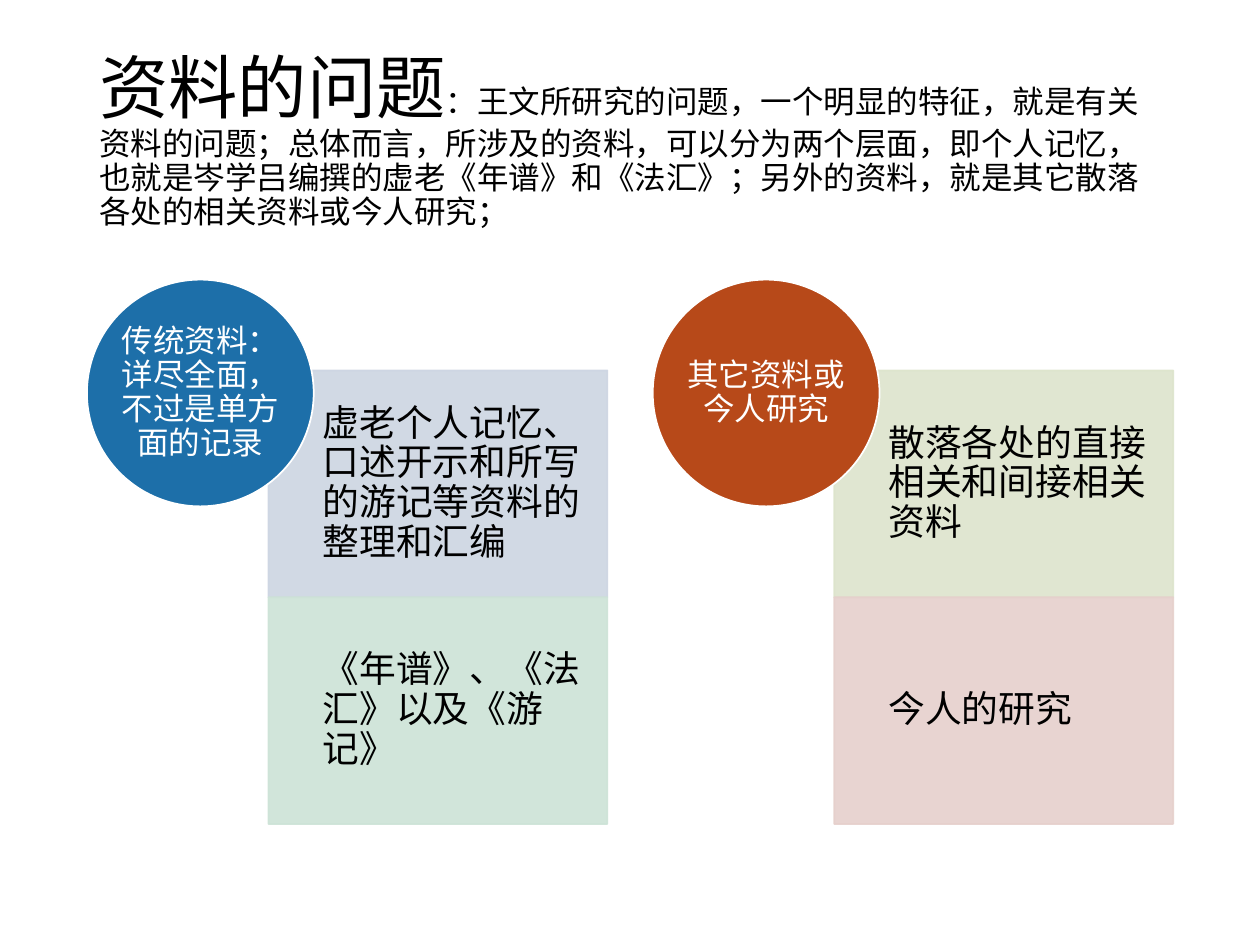
from dataclasses import dataclass

from lxml import etree
from pptx import Presentation
from pptx.dml.color import RGBColor
from pptx.enum.shapes import MSO_SHAPE
from pptx.enum.text import MSO_ANCHOR, PP_ALIGN
from pptx.oxml.ns import qn
from pptx.util import Pt

RECTANGLE = MSO_SHAPE.RECTANGLE
OVAL = MSO_SHAPE.OVAL
MIDDLE = MSO_ANCHOR.MIDDLE
LEFT = PP_ALIGN.LEFT
CENTER = PP_ALIGN.CENTER


@dataclass(frozen=True)
class Theme:
    """Colours, type sizes and font of the slide."""
    font: str = "Times New Roman"
    dark: str = "000000"
    light: str = "FFFFFF"
    heading_size: float = 39.6
    body_size: float = 18
    panel_size: float = 21
    line_spacing: float = 0.9
    panel_opacity: int = 90


THEME = Theme()

PANEL_WIDTH, PANEL_HEIGHT = 193.7, 129.6
PANEL_OFFSET, PANEL_TOP = 103.7, 211.7
CIRCLE_LEFT, CIRCLE_TOP, CIRCLE_SIZE = 49.7, 159.8, 129.6
GROUP_STEP = 323.3

HEADING = "资料的问题"
INTRODUCTION = (
    "：王文所研究的问题，一个明显的特征，就是有关资料的问题；"
    "总体而言，所涉及的资料，可以分为两个层面，即个人记忆，"
    "也就是岑学吕编撰的虚老《年谱》和《法汇》；"
    "另外的资料，就是其它散落各处的相关资料或今人研究；"
)
GROUPS = [
    ("传统资料：详尽全面，不过是单方面的记录", "1D6FA9", [
        ("虚老个人记忆、口述开示和所写的游记等资料的整理和汇编", "CDD5E2"),
        ("《年谱》、《法汇》以及《游记》", "CDE3D7"),
    ]),
    ("其它资料或今人研究", "B74919", [
        ("散落各处的直接相关和间接相关资料", "DDE4CC"),
        ("今人的研究", "E6D0CC"),
    ]),
]


def write_text(shape, runs, color=THEME.dark, align=LEFT, insets=(0, 0, 0, 0)):
    """Fill a shape with one paragraph of (text, size) runs."""
    frame = shape.text_frame
    frame.word_wrap = True
    frame.vertical_anchor = MIDDLE
    (frame.margin_left, frame.margin_top,
     frame.margin_right, frame.margin_bottom) = map(Pt, insets)
    paragraph = frame.paragraphs[0]
    paragraph.alignment = align
    paragraph.line_spacing = THEME.line_spacing
    for text, size in runs:
        run = paragraph.add_run()
        run.text = text
        run.font.name = THEME.font
        run.font.size = Pt(size)
        run.font.color.rgb = RGBColor.from_string(color)


def add_block(slide, kind, left, top, width, height, fill, line):
    """Add a flat preset shape with a solid fill and a thin outline."""
    shape = slide.shapes.add_shape(kind, Pt(left), Pt(top), Pt(width), Pt(height))
    shape.shadow.inherit = False
    shape.fill.solid()
    shape.fill.fore_color.rgb = RGBColor.from_string(fill)
    shape.line.color.rgb = RGBColor.from_string(line)
    shape.line.width = Pt(1)
    return shape


def set_opacity(shape, percent):
    """Make the fill and outline of a shape partly transparent."""
    for color in shape.element.spPr.iter(qn("a:srgbClr")):
        etree.SubElement(color, qn("a:alpha"), val=str(percent * 1000))


def add_title(slide):
    """Add the heading with its running introduction."""
    box = slide.shapes.add_textbox(Pt(49.7), Pt(28.8), Pt(620.6), Pt(104.4))
    runs = [(HEADING, THEME.heading_size), (INTRODUCTION, THEME.body_size)]
    write_text(box, runs, insets=(7.2, 3.6, 7.2, 3.6))


def add_panel(slide, left, top, text, fill):
    """Add one translucent panel of a group."""
    panel = add_block(slide, RECTANGLE, left, top, PANEL_WIDTH, PANEL_HEIGHT, fill, fill)
    set_opacity(panel, THEME.panel_opacity)
    write_text(panel, [(text, THEME.panel_size)], insets=(31, 11.5, 11.5, 11.5))


def add_group(slide, left, label, color, panels):
    """Add stacked panels with a labelled circle over their corner."""
    for row, (text, fill) in enumerate(panels):
        add_panel(slide, left + PANEL_OFFSET, PANEL_TOP + row * PANEL_HEIGHT, text, fill)
    circle = add_block(slide, OVAL, left, CIRCLE_TOP, CIRCLE_SIZE, CIRCLE_SIZE,
                       color, THEME.light)
    write_text(circle, [(label, THEME.body_size)], color=THEME.light, align=CENTER)


def main():
    """Build and save the slide."""
    presentation = Presentation()
    presentation.slide_width, presentation.slide_height = Pt(720), Pt(540)
    slide = presentation.slides.add_slide(presentation.slide_layouts[6])
    add_title(slide)
    for column, (label, color, panels) in enumerate(GROUPS):
        add_group(slide, CIRCLE_LEFT + column * GROUP_STEP, label, color, panels)
    presentation.save("out.pptx")


if __name__ == "__main__":
    main()
